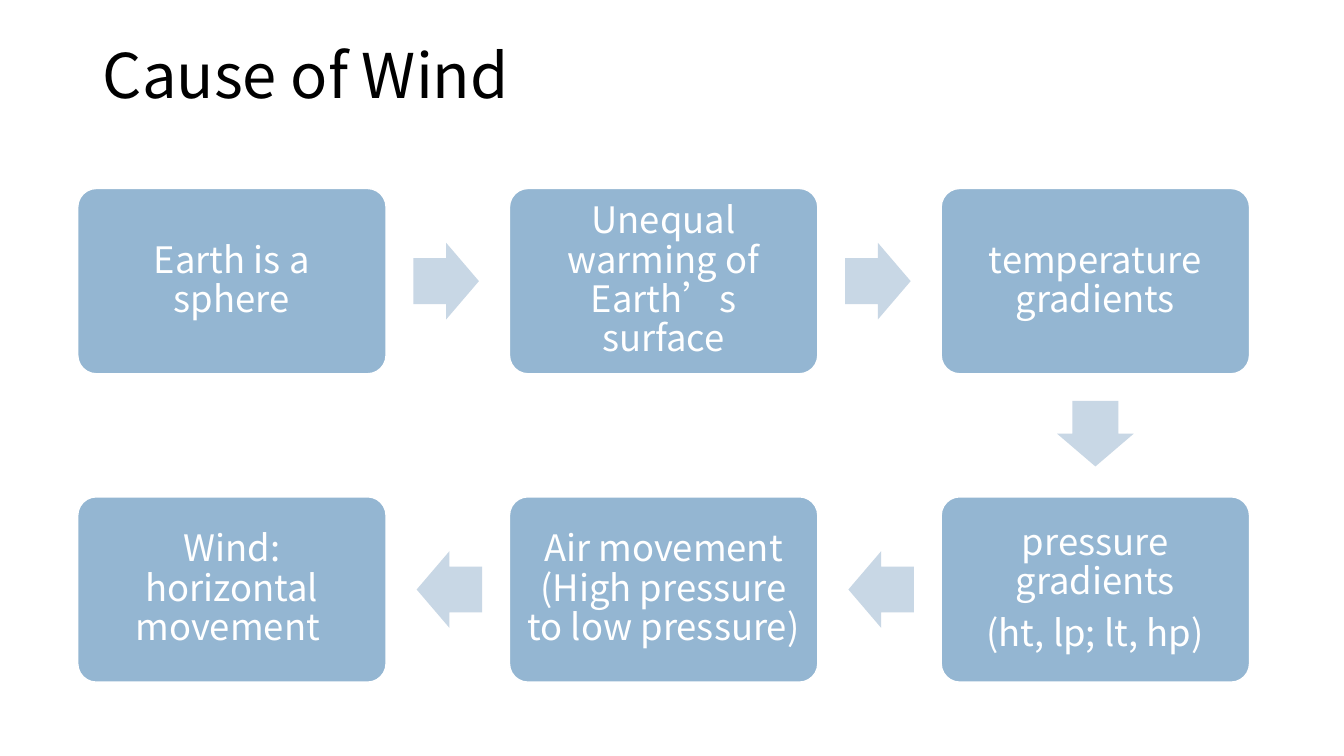
from dataclasses import dataclass

from pptx import Presentation
from pptx.dml.color import RGBColor
from pptx.enum.shapes import MSO_SHAPE as SHAPE
from pptx.enum.text import MSO_ANCHOR as ANCHOR, PP_ALIGN as ALIGN
from pptx.util import Cm, Pt


@dataclass(frozen=True)
class Theme:
    font: str = "Noto Sans CJK SC"
    box: RGBColor = RGBColor(0x94, 0xB6, 0xD2)
    arrow: RGBColor = RGBColor(0xC8, 0xD7, 0xE5)
    light: RGBColor = RGBColor(0xFF, 0xFF, 0xFF)
    dark: RGBColor = RGBColor(0, 0, 0)
    title_size: Pt = Pt(44)
    box_size: Pt = Pt(26)


THEME = Theme()
LEFT, TOP = 1.96, 4.75
BOX_W, BOX_H = 7.77, 4.67
COL_STEP, ROW_STEP = 10.88, 7.77
ARROW_W, ARROW_H = 1.65, 1.93
ARROW_SHIFT = 0.04

STEPS = [
    (0, 0, ["Earth is a sphere"]),
    (1, 0, ["Unequal warming of Earth’s surface"]),
    (2, 0, ["temperature gradients"]),
    (2, 1, ["pressure gradients", "(ht, lp; lt, hp)"]),
    (1, 1, ["Air movement (High pressure to low pressure)"]),
    (0, 1, ["Wind: horizontal movement "]),
]
ROTATION = {(1, 0): 0, (0, 1): 90, (-1, 0): 180}


def set_attrs(obj, values):
    for name, value in values.items():
        setattr(obj, name, value)


def write(tf, lines, frame, para, font):
    set_attrs(tf, {"word_wrap": True, **frame})
    for i, line in enumerate(lines):
        p = tf.add_paragraph() if i else tf.paragraphs[0]
        set_attrs(p, {"line_spacing": 0.9, **para})
        r = p.add_run()
        r.text = line
        set_attrs(r.font, {"name": THEME.font, "size": font["size"]})
        r.font.color.rgb = font["color"]


def add_filled(s, kind, x, y, w, h, color, adjustments):
    sp = s.shapes.add_shape(kind, Cm(x), Cm(y), Cm(w), Cm(h))
    sp.shadow.inherit = False
    sp.fill.solid()
    sp.fill.fore_color.rgb = color
    for i, value in enumerate(adjustments):
        sp.adjustments[i] = value
    return sp


def add_title(s, text):
    sp = s.shapes.add_textbox(Cm(2.34), Cm(1.02), Cm(29.21), Cm(3.68))
    write(sp.text_frame, [text], {"vertical_anchor": ANCHOR.TOP},
          {"alignment": ALIGN.LEFT},
          {"size": THEME.title_size, "color": THEME.dark})


def add_step(s, col, row, lines):
    sp = add_filled(s, SHAPE.ROUNDED_RECTANGLE, LEFT + col * COL_STEP,
                    TOP + row * ROW_STEP, BOX_W, BOX_H, THEME.box, [0.1])
    sp.line.color.rgb = THEME.light
    sp.line.width = Pt(1)
    sides = ("left", "top", "right", "bottom")
    frame = {f"margin_{side}": Cm(0.28) for side in sides}
    write(sp.text_frame, lines, {"vertical_anchor": ANCHOR.MIDDLE, **frame},
          {"alignment": ALIGN.CENTER, "space_after": Pt(9)},
          {"size": THEME.box_size, "color": THEME.light})


def add_arrow(s, start, end):
    dx, dy = end[0] - start[0], end[1] - start[1]
    cx = LEFT + BOX_W / 2 + (start[0] + dx / 2) * COL_STEP - dx * ARROW_SHIFT
    cy = TOP + BOX_H / 2 + (start[1] + dy / 2) * ROW_STEP - dy * ARROW_SHIFT
    sp = add_filled(s, SHAPE.RIGHT_ARROW, cx - ARROW_W / 2, cy - ARROW_H / 2,
                    ARROW_W, ARROW_H, THEME.arrow, [0.6, 0.5])
    sp.line.fill.background()
    sp.rotation = ROTATION[dx, dy]


def main():
    prs = Presentation()
    set_attrs(prs, {"slide_width": Cm(33.87), "slide_height": Cm(19.05)})
    s = prs.slides.add_slide(prs.slide_layouts[6])
    add_title(s, "Cause of Wind")
    for col, row, lines in STEPS:
        add_step(s, col, row, lines)
    for start, end in zip(STEPS, STEPS[1:]):
        add_arrow(s, start[:2], end[:2])
    prs.save("out.pptx")


if __name__ == "__main__":
    main()
